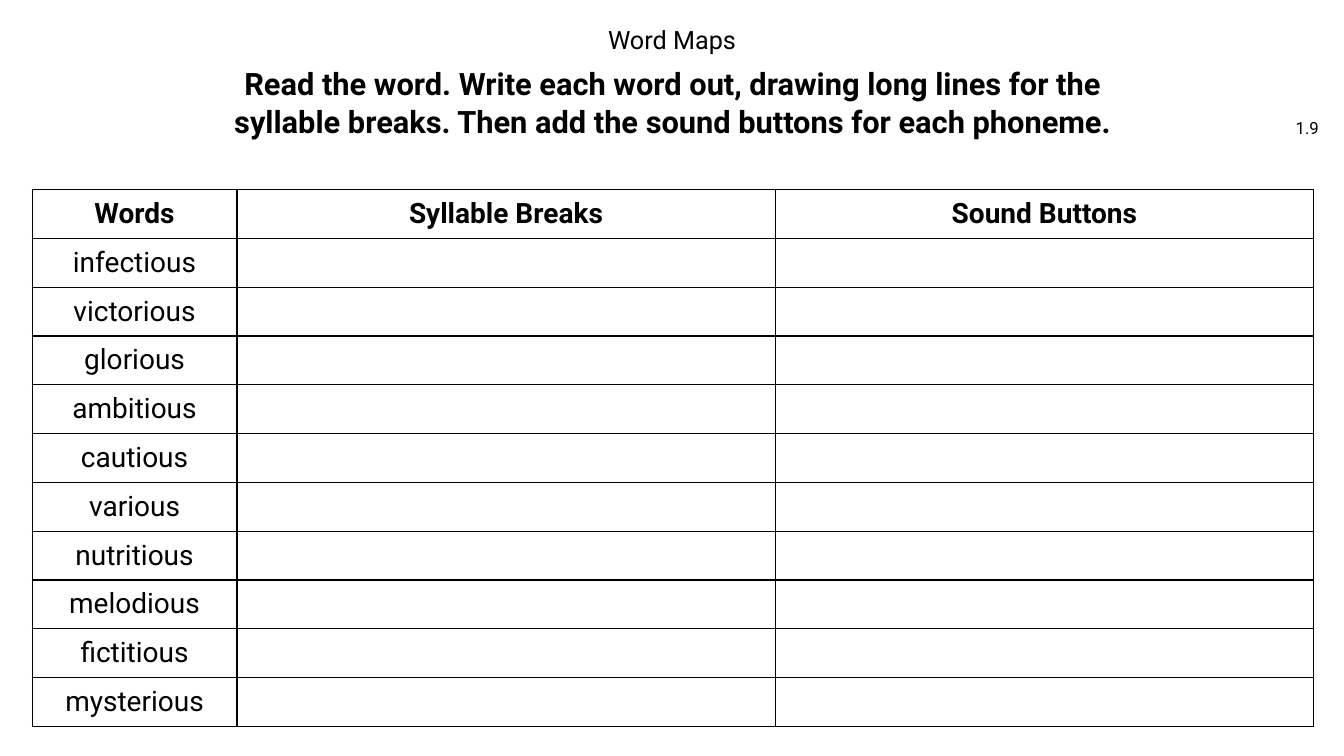
from dataclasses import dataclass

from lxml.etree import SubElement
from pptx import Presentation
from pptx.dml.color import RGBColor
from pptx.enum.text import MSO_ANCHOR as Anchor, PP_ALIGN as Align
from pptx.oxml.ns import qn
from pptx.slide import Slide
from pptx.table import _Cell as Cell
from pptx.util import Inches, Pt

FONT = "Roboto"
BLACK = "000000"
HEADINGS = ["Words", "Syllable Breaks", "Sound Buttons"]
COLUMN_WIDTHS = [2.03, 5.34, 5.34]
WORDS = [
    "infectious", "victorious", "glorious", "ambitious", "cautious",
    "various", "nutritious", "melodious", "fictitious", "mysterious",
]
TABLE_HEIGHT = 5.33


@dataclass
class Label:
    text: str
    left: float
    top: float
    width: float
    height: float
    size: int
    align: Align = Align.CENTER
    anchor: Anchor = Anchor.MIDDLE
    bold: bool = False
    line_spacing: float | Pt = 1.0


LABELS = [
    Label("1.9", 12.55, 1.07, 0.63, 0.4, 12, align=Align.RIGHT),
    Label(
        "Read the word. Write each word out, drawing long lines for the "
        "syllable breaks. Then add the sound buttons for each phoneme.",
        1.97, 0.6, 9.4, 0.82, 22, bold=True, line_spacing=Pt(27),
    ),
    Label("Word Maps", 3.82, 0.23, 5.69, 0.35, 18, anchor=Anchor.TOP, line_spacing=0.9),
]


def color(value: str) -> RGBColor:
    return RGBColor.from_string(value)


def style_font(font, size: int, bold: bool) -> None:
    font.name = FONT
    font.size = Pt(size)
    font.bold = bold
    font.color.rgb = color(BLACK)


def draw_label(page: Slide, label: Label) -> None:
    box = page.shapes.add_textbox(
        Inches(label.left), Inches(label.top), Inches(label.width), Inches(label.height)
    )
    frame = box.text_frame
    frame.word_wrap = True
    frame.vertical_anchor = label.anchor
    para = frame.paragraphs[0]
    para.text = label.text
    para.alignment = label.align
    para.line_spacing = label.line_spacing
    style_font(para.font, label.size, label.bold)


def draw_borders(cell: Cell) -> None:
    properties = cell._tc.get_or_add_tcPr()
    for side in ("a:lnL", "a:lnR", "a:lnT", "a:lnB"):
        line = SubElement(properties, qn(side), w=str(Pt(1)))
        fill = SubElement(line, qn("a:solidFill"))
        SubElement(fill, qn("a:srgbClr"), val=BLACK)


def draw_cell(cell: Cell, text: str, bold: bool) -> None:
    draw_borders(cell)
    cell.fill.background()
    cell.vertical_anchor = Anchor.MIDDLE
    para = cell.text_frame.paragraphs[0]
    para.text = text
    para.alignment = Align.CENTER
    style_font(para.font, 20, bold)


def draw_word_table(page: Slide) -> None:
    rows = [HEADINGS] + [[word, "", ""] for word in WORDS]
    table = page.shapes.add_table(
        len(rows), len(HEADINGS), Inches(0.32), Inches(1.88),
        Inches(sum(COLUMN_WIDTHS)), Inches(TABLE_HEIGHT),
    ).table
    for column, width in zip(table.columns, COLUMN_WIDTHS):
        column.width = Inches(width)
    for row_index, texts in enumerate(rows):
        for column_index, text in enumerate(texts):
            draw_cell(table.cell(row_index, column_index), text, row_index == 0)


def main() -> None:
    deck = Presentation()
    deck.slide_width = Inches(13.33)
    deck.slide_height = Inches(7.5)
    page = deck.slides.add_slide(deck.slide_layouts[6])
    for label in LABELS:
        draw_label(page, label)
    draw_word_table(page)
    deck.save("out.pptx")


if __name__ == "__main__":
    main()
